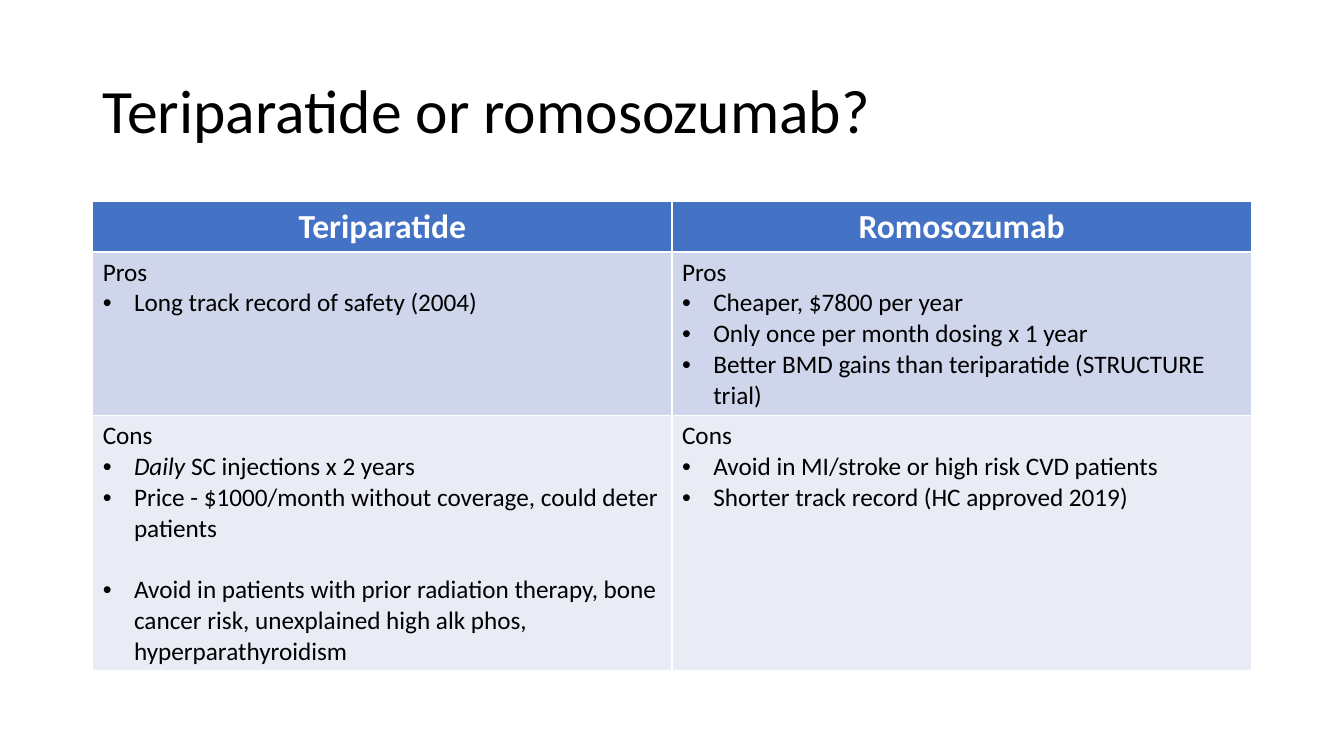
from dataclasses import dataclass

from lxml import etree
from pptx import Presentation
from pptx.dml.color import RGBColor
from pptx.enum.text import MSO_ANCHOR, PP_ALIGN
from pptx.oxml.ns import qn
from pptx.slide import Slide
from pptx.table import _Cell
from pptx.util import Inches, Pt

CENTER = PP_ALIGN.CENTER
MIDDLE = MSO_ANCHOR.MIDDLE

SLIDE_WIDTH, SLIDE_HEIGHT = Inches(13.33), Inches(7.5)
COLUMN = SLIDE_WIDTH / 29
ROW = SLIDE_HEIGHT / 300
LEFT_COLUMN, COLUMN_SPAN = 2, 25
TITLE_ROW, TITLE_SPAN = 16, 58
TABLE_ROW = 80
TABLE_ROW_SPANS = (20, 65, 101)

FONT = "Calibri"
BULLET_INDENT = Inches(0.31)
COLORS = {
    "text": "000000",
    "header_text": "FFFFFF",
    "header": "4472C4",
    "pros": "CFD5EA",
    "cons": "E9EBF5",
}


@dataclass(frozen=True)
class Line:
    text: str
    bullet: bool = True
    italic_start: str = ""
    space_before: float = 0


@dataclass(frozen=True)
class Drug:
    name: str
    pros: tuple[Line, ...]
    cons: tuple[Line, ...]


DRUGS = (
    Drug(
        "Teriparatide",
        pros=(Line("Long track record of safety (2004)"),),
        cons=(
            Line("SC injections x 2 years", italic_start="Daily "),
            Line("Price - $1000/month without coverage, could deter patients"),
            Line(
                "Avoid in patients with prior radiation therapy, bone cancer risk, "
                "unexplained high alk phos, hyperparathyroidism",
                space_before=22,
            ),
        ),
    ),
    Drug(
        "Romosozumab",
        pros=(
            Line("Cheaper, $7800 per year"),
            Line("Only once per month dosing x 1 year"),
            Line("Better BMD gains than teriparatide (STRUCTURE trial)"),
        ),
        cons=(
            Line("Avoid in MI/stroke or high risk CVD patients"),
            Line("Shorter track record (HC approved 2019)"),
        ),
    ),
)


def style_font(font, size: float, color: str, bold: bool = False) -> None:
    font.name = FONT
    font.size = Pt(size)
    font.bold = bold
    font.color.rgb = RGBColor.from_string(COLORS[color])


def add_bullet(paragraph) -> None:
    properties = paragraph._p.get_or_add_pPr()
    properties.set("marL", str(BULLET_INDENT))
    properties.set("indent", str(-BULLET_INDENT))
    bullet_font = etree.Element(qn("a:buFont"), typeface="Arial")
    bullet = etree.Element(qn("a:buChar"), char="•")
    default_run = properties.find(qn("a:defRPr"))
    default_run.addprevious(bullet_font)
    default_run.addprevious(bullet)


def fill_cell(cell: _Cell, color: str) -> None:
    cell.fill.solid()
    cell.fill.fore_color.rgb = RGBColor.from_string(COLORS[color])


def write_header(cell: _Cell, name: str) -> None:
    fill_cell(cell, "header")
    paragraph = cell.text_frame.paragraphs[0]
    paragraph.text = name
    paragraph.alignment = CENTER
    style_font(paragraph.font, 24, "header_text", bold=True)


def write_points(cell: _Cell, heading: str, points: tuple[Line, ...], color: str) -> None:
    fill_cell(cell, color)
    frame = cell.text_frame
    for index, line in enumerate((Line(heading, bullet=False), *points)):
        paragraph = frame.add_paragraph() if index else frame.paragraphs[0]
        if line.space_before:
            paragraph.space_before = Pt(line.space_before)
        style_font(paragraph.font, 18, "text")
        if line.bullet:
            add_bullet(paragraph)
        if line.italic_start:
            run = paragraph.add_run()
            run.text = line.italic_start
            run.font.italic = True
        paragraph.add_run().text = line.text


def add_title(slide: Slide, text: str) -> None:
    box = slide.shapes.add_textbox(
        round(LEFT_COLUMN * COLUMN), round(TITLE_ROW * ROW),
        round(COLUMN_SPAN * COLUMN), round(TITLE_SPAN * ROW),
    )
    frame = box.text_frame
    frame.word_wrap = True
    frame.vertical_anchor = MIDDLE
    paragraph = frame.paragraphs[0]
    paragraph.text = text
    paragraph.line_spacing = 0.9
    style_font(paragraph.font, 44, "text")


def add_comparison(slide: Slide, drugs: tuple[Drug, ...]) -> None:
    table = slide.shapes.add_table(
        len(TABLE_ROW_SPANS), len(drugs),
        round(LEFT_COLUMN * COLUMN), round(TABLE_ROW * ROW),
        round(COLUMN_SPAN * COLUMN), round(sum(TABLE_ROW_SPANS) * ROW),
    ).table
    for table_row, span in zip(table.rows, TABLE_ROW_SPANS):
        table_row.height = round(span * ROW)
    for index, drug in enumerate(drugs):
        write_header(table.cell(0, index), drug.name)
        write_points(table.cell(1, index), "Pros", drug.pros, "pros")
        write_points(table.cell(2, index), "Cons", drug.cons, "cons")


def main() -> None:
    presentation = Presentation()
    presentation.slide_width = SLIDE_WIDTH
    presentation.slide_height = SLIDE_HEIGHT
    slide = presentation.slides.add_slide(presentation.slide_layouts[6])
    add_title(slide, "Teriparatide or romosozumab?")
    add_comparison(slide, DRUGS)
    presentation.save("out.pptx")


if __name__ == "__main__":
    main()
